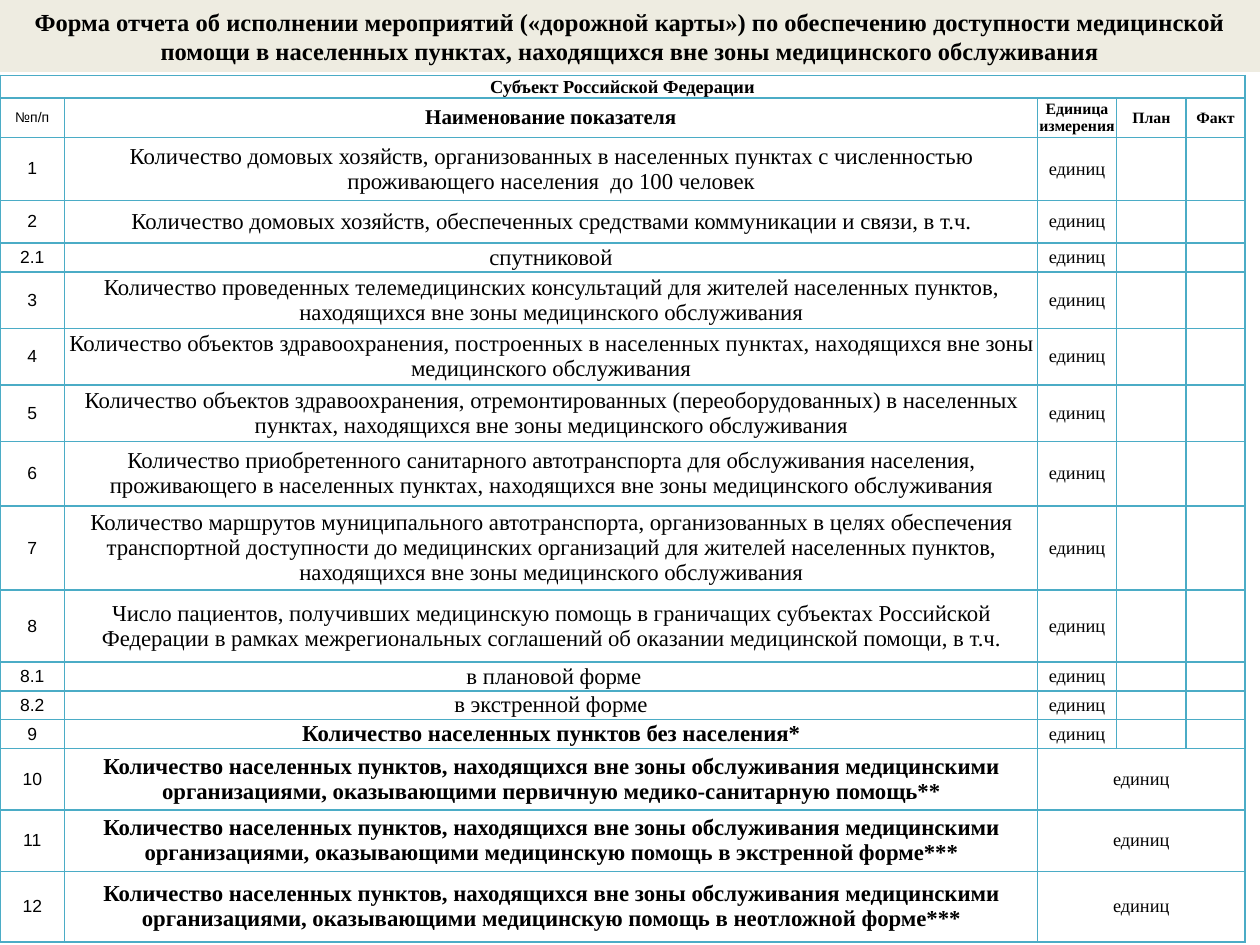
import pptx
import pptx.util
import pptx.dml.color
import pptx.enum.shapes
import pptx.enum.text
import pptx.oxml
import pptx.oxml.ns

Cm = pptx.util.Cm
Pt = pptx.util.Pt
SERIF = "Times New Roman"
SANS = "Arial"
BLACK = "000000"
EDGE = "4BACC6"
UNIT = "единиц"
OUT = "находящихся вне зоны медицинского обслуживания"
ZONE = ("Количество населенных пунктов, находящихся вне зоны обслуживания "
        "медицинскими организациями, оказывающими ")

TITLE = ("Форма отчета об исполнении мероприятий («дорожной карты») по обеспечению "
         f"доступности медицинской помощи в населенных пунктах, {OUT}")
HEADS = [("№п/п", 8), ("Наименование показателя", 12), ("Единица измерения", 9),
         ("План", 9), ("Факт", 9)]
WIDTHS = [1.3, 19.61, 1.6, 1.4, 1.19]
TOPS = [0.46, 0.79]
ITEMS = [
    ("1", 1.27, "Количество домовых хозяйств, организованных в населенных пунктах "
     "с численностью проживающего населения  до 100 человек"),
    ("2", 0.86, "Количество домовых хозяйств, обеспеченных средствами коммуникации и связи, в т.ч."),
    ("2.1", 0.58, "спутниковой"),
    ("3", 1.14, "Количество проведенных телемедицинских консультаций для жителей "
     f"населенных пунктов, {OUT}"),
    ("4", 1.14, f"Количество объектов здравоохранения, построенных в населенных пунктах, {OUT}"),
    ("5", 1.14, "Количество объектов здравоохранения, отремонтированных "
     f"(переоборудованных) в населенных пунктах, {OUT}"),
    ("6", 1.3, "Количество приобретенного санитарного автотранспорта для обслуживания "
     f"населения, проживающего в населенных пунктах, {OUT}"),
    ("7", 1.7, "Количество маршрутов муниципального автотранспорта, организованных в целях "
     "обеспечения транспортной доступности до медицинских организаций для жителей "
     f"населенных пунктов, {OUT}"),
    ("8", 1.45, "Число пациентов, получивших медицинскую помощь в граничащих субъектах "
     "Российской Федерации в рамках межрегиональных соглашений об оказании "
     "медицинской помощи, в т.ч."),
    ("8.1", 0.58, " в плановой форме"),
    ("8.2", 0.58, "в экстренной форме"),
    ("9", 0.58, "Количество населенных пунктов без населения*"),
    ("10", 1.24, ZONE + "первичную медико-санитарную помощь**"),
    ("11", 1.24, ZONE + "медицинскую помощь в экстренной форме***"),
    ("12", 1.42, ZONE + "медицинскую помощь в неотложной форме***"),
]


def color(code):
    return pptx.dml.color.RGBColor.from_string(code)


def write(frame, text, size=10.5, font=SERIF, bold=False, tint=BLACK):
    par = frame.paragraphs[0]
    par.alignment = pptx.enum.text.PP_ALIGN.CENTER
    if not text:
        end = pptx.oxml.ns.qn("a:endParaRPr")
        par._p.append(par._p.makeelement(end, {"sz": str(int(size * 100))}))
        return
    run = par.add_run()
    run.text = text
    run.font.size = Pt(size)
    run.font.name = font
    run.font.bold = bold
    run.font.color.rgb = color(tint)


def border(cell):
    props = cell._tc.get_or_add_tcPr()
    for spot, side in enumerate("LRTB"):
        props.insert(spot, pptx.oxml.parse_xml(
            f'<a:ln{side} {pptx.oxml.ns.nsdecls("a")} w="{Pt(1)}">'
            f'<a:solidFill><a:srgbClr val="{EDGE}"/></a:solidFill></a:ln{side}>'))


def style(cell):
    cell.margin_left = cell.margin_right = 0
    cell.margin_top = cell.margin_bottom = 0
    cell.vertical_anchor = pptx.enum.text.MSO_ANCHOR.MIDDLE
    cell.fill.background()
    border(cell)


def banner(slide):
    box = slide.shapes.add_shape(pptx.enum.shapes.MSO_SHAPE.RECTANGLE,
                                 0, 0, Cm(25.4), Cm(1.45))
    box.shadow.inherit = False
    box.fill.solid()
    box.fill.fore_color.rgb = color("EEECE1")
    box.line.fill.background()
    box.text_frame.word_wrap = True
    write(box.text_frame, TITLE, size=14, bold=True)


def grid(slide):
    highs = TOPS + [item[1] for item in ITEMS]
    table = slide.shapes.add_table(len(highs), len(WIDTHS), 0, Cm(1.52),
                                   Cm(sum(WIDTHS)), Cm(sum(highs))).table
    table.first_row = table.horz_banding = False
    for col, width in zip(table.columns, WIDTHS):
        col.width = Cm(width)
    for row, high in zip(table.rows, highs):
        row.height = Cm(high)
    for cell in table.iter_cells():
        style(cell)
    return table


def fill(table):
    table.cell(0, 0).merge(table.cell(0, 4))
    write(table.cell(0, 0).text_frame, "Субъект Российской Федерации", bold=True)
    for col, (text, size) in enumerate(HEADS):
        write(table.cell(1, col).text_frame, text, size=size,
              font=SERIF if col else SANS, bold=col > 0)
    for row, (num, _, name) in enumerate(ITEMS, len(TOPS)):
        write(table.cell(row, 0).text_frame, num, size=10, font=SANS)
        write(table.cell(row, 1).text_frame, name, size=13, bold=name.endswith("*"))
        write(table.cell(row, 2).text_frame, UNIT)
        for col in (3, 4):
            write(table.cell(row, col).text_frame, "")
        if name.endswith("**"):
            table.cell(row, 2).merge(table.cell(row, 4))


def main():
    deck = pptx.Presentation()
    deck.slide_width, deck.slide_height = Cm(25.4), Cm(19.05)
    slide = deck.slides.add_slide(deck.slide_layouts[6])
    fill(grid(slide))
    banner(slide)
    deck.save("out.pptx")


if __name__ == "__main__":
    main()
